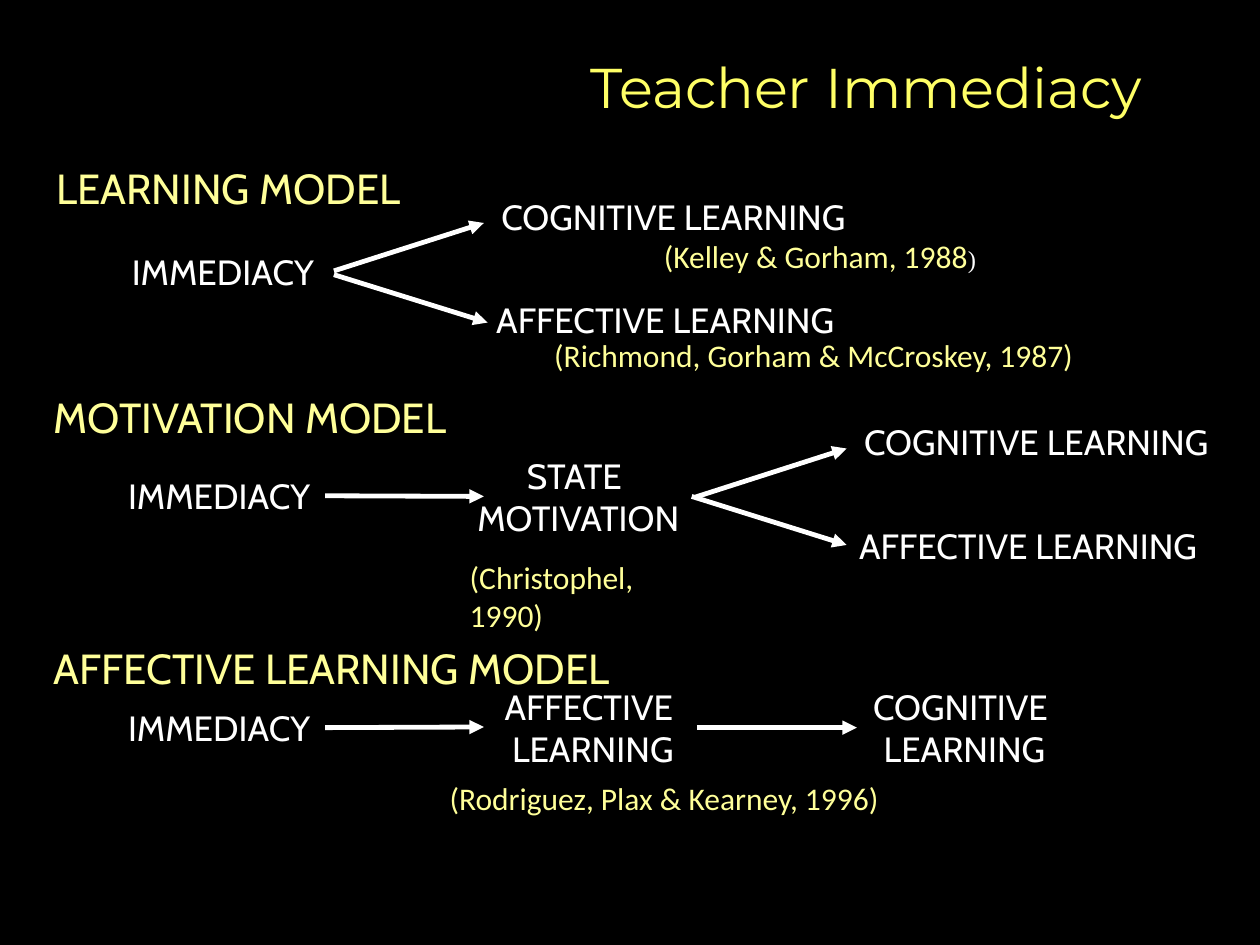
from dataclasses import dataclass
from typing import Optional

from lxml import etree
from pptx import Presentation
from pptx import util as u
from pptx.dml.color import RGBColor
from pptx.enum import shapes, text
from pptx.oxml import ns

WHITE, PALE, YELLOW = "FFFFFF", "FFFF99", "FFFF66"
RIGHT_SIDE, LEFT_SIDE = 3, 1
CENTER, LEFT = text.PP_ALIGN.CENTER, text.PP_ALIGN.LEFT


@dataclass(frozen=True)
class Style:
    size: float
    font: str
    color: str


HEADING = Style(24, "Cabin", PALE)
CONCEPT = Style(20, "Cabin", WHITE)
CITATION = Style(18, "Calibri", PALE)
BRACKET = Style(14, "Times New Roman", WHITE)
TITLE = Style(32, "Montserrat", YELLOW)


@dataclass(frozen=True)
class Label:
    lines: tuple[str, ...]
    left: float
    top: float
    width: float
    height: float
    style: Style = CONCEPT
    align: text.PP_ALIGN = CENTER


@dataclass(frozen=True)
class Arrow:
    start: tuple[float, float]
    end: tuple[float, float]
    source: Optional[str] = None
    target: Optional[str] = None


LABELS = {
    "learning_heading": Label(("LEARNING MODEL",), 0.35, 1.24, 2.93, 0.5, HEADING, LEFT),
    "learning_immediacy": Label(("IMMEDIACY",), 0.93, 1.94, 1.68, 0.43),
    "learning_cognitive": Label(("COGNITIVE LEARNING",), 3.84, 1.5, 3.01, 0.43),
    "learning_affective": Label(("AFFECTIVE LEARNING",), 3.84, 2.32, 3.03, 0.43, align=LEFT),
    "kelley": Label(("(Kelley & Gorham, 1988",), 5.17, 1.83, 2.71, 0.4, CITATION, LEFT),
    "richmond": Label(("(Richmond, Gorham & McCroskey, 1987)",), 4.3, 2.62, 4.45, 0.4,
                      CITATION, LEFT),
    "motivation_heading": Label(("MOTIVATION MODEL",), 0.33, 3.06, 3.37, 0.5, HEADING, LEFT),
    "motivation_immediacy": Label(("IMMEDIACY",), 0.9, 3.72, 1.68, 0.43),
    "state_motivation": Label(("STATE ", "MOTIVATION"), 3.66, 3.56, 1.86, 0.77),
    "motivation_cognitive": Label(("COGNITIVE LEARNING",), 6.72, 3.29, 3.01, 0.43),
    "motivation_affective": Label(("AFFECTIVE LEARNING",), 6.72, 4.11, 3.03, 0.43, align=LEFT),
    "christophel": Label(("(Christophel, 1990)",), 3.63, 4.38, 2.13, 0.4, CITATION, LEFT),
    "affective_heading": Label(("AFFECTIVE LEARNING MODEL",), 0.33, 5.05, 4.68, 0.5,
                               HEADING, LEFT),
    "affective_immediacy": Label(("IMMEDIACY",), 0.9, 5.56, 1.68, 0.43),
    "affective_learning": Label(("AFFECTIVE ", "LEARNING"), 3.88, 5.39, 1.65, 0.77),
    "cognitive_learning": Label(("COGNITIVE ", "LEARNING"), 6.8, 5.39, 1.71, 0.77),
    "rodriguez": Label(("(Rodriguez, Plax & Kearney, 1996)",), 3.47, 6.13, 3.64, 0.4,
                       CITATION, LEFT),
}

ARROWS = (
    Arrow((2.65, 2.15), (3.84, 1.77)),
    Arrow((2.65, 2.18), (3.87, 2.56)),
    Arrow((2.58, 3.94), (3.84, 3.94), "motivation_immediacy"),
    Arrow((5.52, 3.94), (6.72, 3.56), "state_motivation"),
    Arrow((5.49, 3.94), (6.72, 4.32), target="motivation_affective"),
    Arrow((2.58, 5.77), (3.84, 5.77), "affective_immediacy"),
    Arrow((5.54, 5.77), (6.8, 5.77), "affective_learning", "cognitive_learning"),
)


def rgb(color: str) -> RGBColor:
    return RGBColor.from_string(color)


def add_run(paragraph, words: str, style: Style) -> None:
    run = paragraph.add_run()
    run.text = words
    formats = {"size": u.Pt(style.size), "name": style.font, "bold": False}
    for attribute, value in formats.items():
        setattr(run.font, attribute, value)
    run.font.color.rgb = rgb(style.color)


def add_label(slide, label: Label):
    bounds = (label.left, label.top, label.width, label.height)
    box = slide.shapes.add_textbox(*map(u.Inches, bounds))
    frame = box.text_frame
    frame.word_wrap = False
    for index, line in enumerate(label.lines):
        paragraph = frame.add_paragraph() if index else frame.paragraphs[0]
        paragraph.alignment = label.align
        add_run(paragraph, line, label.style)
    return box


def add_arrow(slide, arrow: Arrow, boxes: dict) -> None:
    ends = map(u.Inches, (*arrow.start, *arrow.end))
    connector = slide.shapes.add_connector(shapes.MSO_CONNECTOR.STRAIGHT, *ends)
    if arrow.source:
        connector.begin_connect(boxes[arrow.source], RIGHT_SIDE)
    if arrow.target:
        connector.end_connect(boxes[arrow.target], LEFT_SIDE)
    connector.line.color.rgb = rgb(WHITE)
    connector.line.width = u.Pt(2.75)
    etree.SubElement(connector.line._get_or_add_ln(), ns.qn("a:tailEnd"), type="triangle")
    etree.SubElement(connector._element.spPr, ns.qn("a:effectLst"))


def add_title(slide, words: str) -> None:
    title = slide.shapes.title
    bounds = {"left": 0.67, "top": 0.25, "width": 8.5, "height": 0.75}
    for attribute, value in bounds.items():
        setattr(title, attribute, u.Inches(value))
    title.text_frame.vertical_anchor = text.MSO_ANCHOR.BOTTOM
    paragraph = title.text_frame.paragraphs[0]
    paragraph.alignment = text.PP_ALIGN.RIGHT
    add_run(paragraph, words, TITLE)


def main() -> None:
    deck = Presentation()
    deck.slide_width, deck.slide_height = u.Inches(10), u.Inches(7.5)
    slide = deck.slides.add_slide(deck.slide_layouts[5])
    slide.background.fill.solid()
    slide.background.fill.fore_color.rgb = rgb("000000")
    add_title(slide, "Teacher Immediacy")
    boxes = {part: add_label(slide, label) for part, label in LABELS.items()}
    add_run(boxes["kelley"].text_frame.paragraphs[0], ")", BRACKET)
    for arrow in ARROWS:
        add_arrow(slide, arrow, boxes)
    deck.save("out.pptx")


if __name__ == "__main__":
    main()
